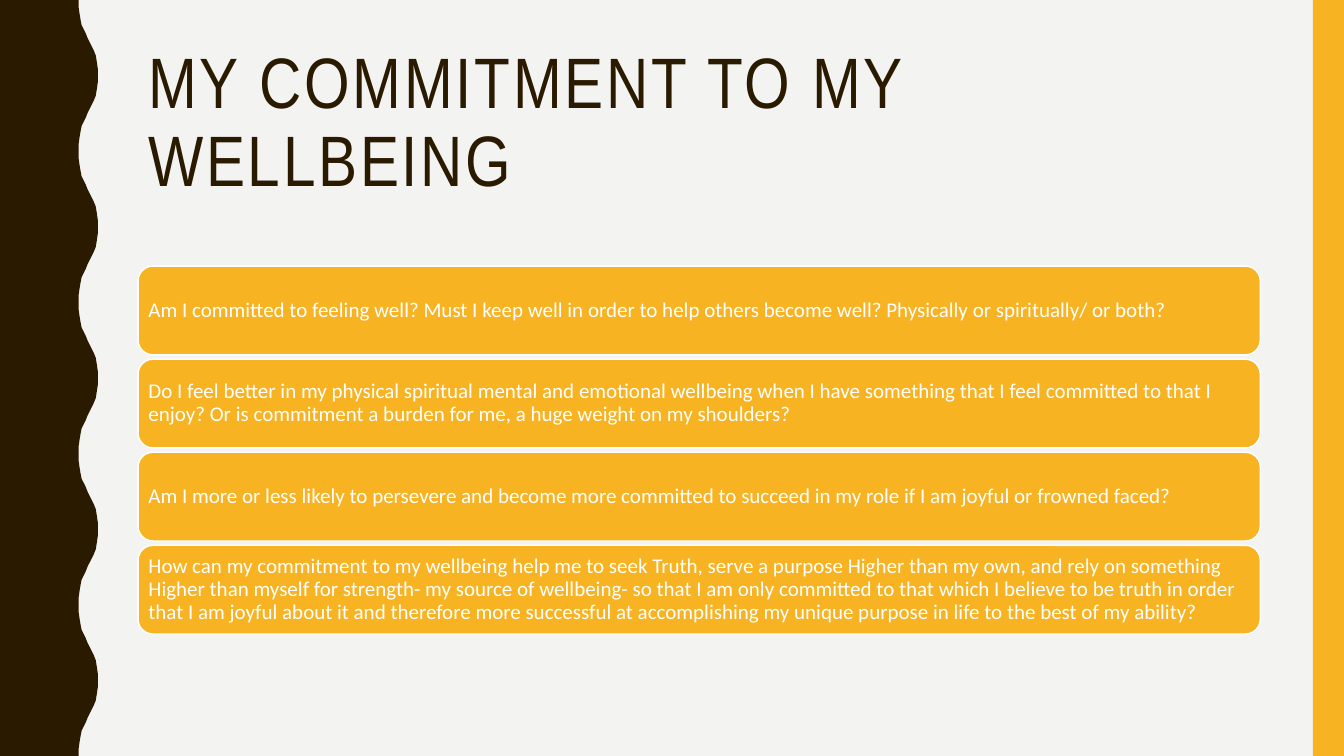
from pptx import Presentation
from pptx.dml.color import RGBColor
from pptx.enum.shapes import MSO_SHAPE
from pptx.enum.text import MSO_ANCHOR, PP_ALIGN
from pptx.util import Inches, Pt

RECTANGLE = MSO_SHAPE.RECTANGLE
ROUNDED_RECTANGLE = MSO_SHAPE.ROUNDED_RECTANGLE
MIDDLE = MSO_ANCHOR.MIDDLE
TOP = MSO_ANCHOR.TOP
LEFT = PP_ALIGN.LEFT

BROWN = "2A1A00"
AMBER = "F8B323"
WHITE = "FFFFFF"
PAPER = "F3F3F2"

SLIDE_HEIGHT = 7.5
CONTENT_LEFT, CONTENT_WIDTH = 1.37, 11.13


def paint(fill, color):
    fill.solid()
    fill.fore_color.rgb = RGBColor.from_string(color)


def write(shape, text, font_name, size, color, anchor):
    """Put one left-aligned, wrapped paragraph in the shape and return its run."""
    frame = shape.text_frame
    frame.word_wrap = True
    frame.vertical_anchor = anchor
    paragraph = frame.paragraphs[0]
    paragraph.alignment = LEFT
    paragraph.line_spacing = 0.9
    run = paragraph.add_run()
    run.text = text
    run.font.name = font_name
    run.font.size = Pt(size)
    run.font.color.rgb = RGBColor.from_string(color)
    return run


presentation = Presentation()
presentation.slide_width = Inches(13.33)
presentation.slide_height = Inches(SLIDE_HEIGHT)
slide = presentation.slides.add_slide(presentation.slide_layouts[6])
paint(slide.background.fill, PAPER)

# Wavy left band: half a wave swings right, its mirror swings back
WAVE_COUNT = 5
WAVE_LENGTH = SLIDE_HEIGHT / WAVE_COUNT
half_wave = [
    (0.78, 0), (0.78, 0.07), (0.79, 0.14), (0.8, 0.2), (0.81, 0.25),
    (0.83, 0.29), (0.85, 0.33), (0.87, 0.38), (0.89, 0.42), (0.91, 0.46),
    (0.93, 0.5), (0.95, 0.55), (0.96, 0.61), (0.97, 0.68), (0.97, 0.75),
]
mirrored_half = [(x, WAVE_LENGTH - y) for x, y in reversed(half_wave[:-1])]
edge = [
    (Inches(x), Inches(y + wave * WAVE_LENGTH))
    for wave in range(WAVE_COUNT)
    for x, y in half_wave + mirrored_half
]
builder = slide.shapes.build_freeform(0, 0)
builder.add_line_segments(edge + [(0, Inches(SLIDE_HEIGHT))], close=True)
wavy_band = builder.convert_to_shape()
wavy_band.shadow.inherit = False
paint(wavy_band.fill, BROWN)
wavy_band.line.fill.background()

right_bar = slide.shapes.add_shape(
    RECTANGLE, Inches(13.02), 0, Inches(0.31), Inches(SLIDE_HEIGHT))
right_bar.shadow.inherit = False
paint(right_bar.fill, AMBER)
right_bar.line.fill.background()

title = slide.shapes.add_textbox(
    Inches(CONTENT_LEFT), Inches(0.42), Inches(CONTENT_WIDTH), Inches(1.63))
title_run = write(title, "MY COMMITMENT TO MY WELLBEING", "Arial Narrow", 51, BROWN, TOP)
title_run.font._element.set("spc", "200")

# Question cards, evenly spaced
questions = [
    "Am I committed to feeling well? Must I keep well in order to help others "
    "become well? Physically or spiritually/ or both?",
    "Do I feel better in my physical spiritual mental and emotional wellbeing "
    "when I have something that I feel committed to that I enjoy? Or is "
    "commitment a burden for me, a huge weight on my shoulders?",
    "Am I more or less likely to persevere and become more committed to succeed "
    "in my role if I am joyful or frowned faced?",
    "How can my commitment to my wellbeing help me to seek Truth, serve a purpose "
    "Higher than my own, and rely on something Higher than myself for strength- "
    "my source of wellbeing- so that I am only committed to that which I believe "
    "to be truth in order that I am joyful about it and therefore more successful "
    "at accomplishing my unique purpose in life to the best of my ability?",
]
FIRST_TOP, LAST_TOP = 2.64, 5.41
card_step = (LAST_TOP - FIRST_TOP) / (len(questions) - 1)
for index, question in enumerate(questions):
    card = slide.shapes.add_shape(
        ROUNDED_RECTANGLE, Inches(CONTENT_LEFT), Inches(FIRST_TOP + index * card_step),
        Inches(CONTENT_WIDTH), Inches(0.88))
    card.shadow.inherit = False
    paint(card.fill, AMBER)
    paint(card.line.fill, WHITE)
    card.line.width = Pt(1)
    frame = card.text_frame
    frame.margin_left = frame.margin_right = Inches(0.06)
    frame.margin_top = frame.margin_bottom = Inches(0.06)
    write(card, question, "Calibri", 15, WHITE, MIDDLE)

presentation.save("out.pptx")
